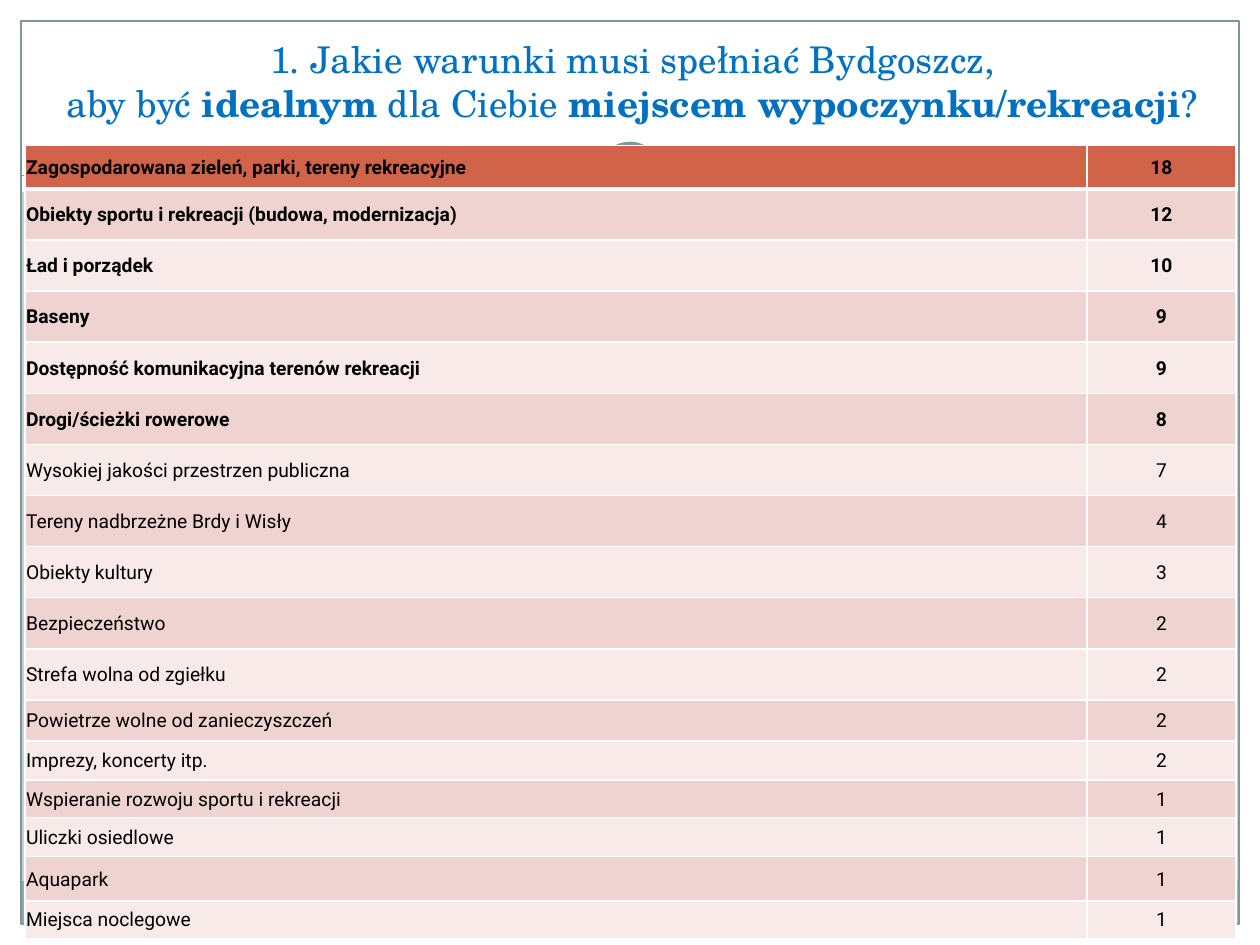
import pptx
import pptx.dml.color
import pptx.enum.dml
import pptx.enum.shapes
import pptx.enum.text
import pptx.oxml
import pptx.oxml.ns
import pptx.util
from lxml import etree

Pt = pptx.util.Pt
SHAPE = pptx.enum.shapes.MSO_SHAPE
ALIGN = pptx.enum.text.PP_ALIGN
ANCHOR = pptx.enum.text.MSO_ANCHOR


def color(hex_string):
    return pptx.dml.color.RGBColor.from_string(hex_string)


def write(paragraph, text, font="Roboto", size=11, ink="000000", bold=False, align=ALIGN.LEFT):
    paragraph.alignment = align
    run = paragraph.add_run()
    run.text = text
    run.font.name = font
    run.font.size = Pt(size)
    run.font.bold = bold
    run.font.color.rgb = color(ink)


deck = pptx.Presentation()
deck.slide_width, deck.slide_height = Pt(720), Pt(540)
slide = deck.slides.add_slide(deck.slide_layouts[6])
slide.background.fill.solid()
slide.background.fill.fore_color.rgb = color("C5D1D7")

# White margins, footer band, frame and the circle behind the table
# (shape, left, top, width, height, fill, line, line width)
backdrop = [
    (SHAPE.RECTANGLE, 0, 528, 720, 12, "FFFFFF", None, 0),
    (SHAPE.RECTANGLE, 0, 0, 720, 109.5, "FFFFFF", None, 0),
    (SHAPE.RECTANGLE, 0, 0, 12, 540, "FFFFFF", None, 0),
    (SHAPE.RECTANGLE, 708, 0, 12, 540, "FFFFFF", None, 0),
    (SHAPE.RECTANGLE, 11.75, 503.5, 695.5, 24.5, "8CADAE", None, 0),
    (SHAPE.RECTANGLE, 12, 12, 696, 516, None, "7C999A", 0.75),
    ("dashed rule", 12, 100.5, 696, 0, None, "7C999A", 0.75),
    (SHAPE.OVAL, 336, 75.5, 48, 48, "FFFFFF", None, 0),
    (SHAPE.OVAL, 343.5, 83, 33, 33, "FFFFFF", "7C999A", 4),
]
for kind, left, top, width, height, fill, line, weight in backdrop:
    if kind == "dashed rule":
        rule = slide.shapes.add_connector(
            pptx.enum.shapes.MSO_CONNECTOR.STRAIGHT, Pt(left), Pt(top), Pt(left + width), Pt(top))
        rule.line.color.rgb = color(line)
        rule.line.width = Pt(weight)
        rule.line.dash_style = pptx.enum.dml.MSO_LINE.SQUARE_DOT
        etree.SubElement(rule.element.spPr, pptx.oxml.ns.qn("a:effectLst"))
        continue
    part = slide.shapes.add_shape(kind, Pt(left), Pt(top), Pt(width), Pt(height))
    part.shadow.inherit = False
    if fill:
        part.fill.solid()
        part.fill.fore_color.rgb = color(fill)
    else:
        part.fill.background()
    if line:
        part.line.color.rgb = color(line)
        part.line.width = Pt(weight)
    else:
        part.line.fill.background()

# Title question
title = slide.shapes.add_textbox(Pt(25.5), Pt(15), Pt(671.5), Pt(60)).text_frame
title.word_wrap = True
title.vertical_anchor = ANCHOR.BOTTOM
question = title.paragraphs[0]
title_format = dict(font="TeX Gyre Schola", size=21, ink="0070C0", align=ALIGN.CENTER)
write(question, "1. Jakie warunki musi spełniać Bydgoszcz,", **title_format)
question.add_line_break()
for text, bold in [("aby być ", False), ("idealnym", True), (" dla Ciebie ", False),
                   ("miejscem wypoczynku/rekreacji", True), ("?", False)]:
    write(question, text, bold=bold, **title_format)

# Answers, number of mentions, row height
answers = [
    ("Zagospodarowana zieleń, parki, tereny rekreacyjne", 18, 25),
    ("Obiekty sportu i rekreacji (budowa, modernizacja)", 12, 29.2),
    ("Ład i porządek", 10, 29.2),
    ("Baseny", 9, 29.2),
    ("Dostępność komunikacyjna terenów rekreacji", 9, 29.2),
    ("Drogi/ścieżki rowerowe", 8, 29.2),
    ("Wysokiej jakości przestrzen publiczna", 7, 29.2),
    ("Tereny nadbrzeżne Brdy i Wisły", 4, 29.2),
    ("Obiekty kultury", 3, 29.2),
    ("Bezpieczeństwo", 2, 29.2),
    ("Strefa wolna od zgiełku", 2, 29.2),
    ("Powietrze wolne od zanieczyszczeń", 2, 23.4),
    ("Imprezy, koncerty itp.", 2, 22.4),
    ("Wspieranie rozwoju sportu i rekreacji", 1, 21.5),
    ("Uliczki osiedlowe", 1, 22.3),
    ("Aquapark", 1, 25.4),
    ("Miejsca noclegowe", 1, 21.4),
]
BOLD_ROWS = 6
ranking = slide.shapes.add_table(
    len(answers), 2, Pt(14.2), Pt(83), Pt(692), Pt(sum(a[2] for a in answers))).table
ranking.columns[0].width, ranking.columns[1].width = Pt(607), Pt(85)

for row, (answer, mentions, height) in enumerate(answers):
    ranking.rows[row].height = Pt(height)
    shade = "D16349" if row == 0 else ("F7EAE9", "EED3D0")[row % 2]
    for column, (text, align) in enumerate([(answer, ALIGN.LEFT), (str(mentions), ALIGN.CENTER)]):
        cell = ranking.cell(row, column)
        cell.margin_left = cell.margin_right = cell.margin_top = Pt(0.7)
        cell.margin_bottom = 0
        cell.vertical_anchor = ANCHOR.MIDDLE
        cell.fill.solid()
        cell.fill.fore_color.rgb = color(shade)
        write(cell.text_frame.paragraphs[0], text, bold=row < BOLD_ROWS, align=align)
        # White cell borders, thicker between the first row and the rest
        properties = cell._tc.get_or_add_tcPr()
        for position, side in enumerate("LRTB"):
            heavy = (row, side) in [(0, "B"), (1, "T")]
            properties.insert(position, pptx.oxml.parse_xml(
                f'<a:ln{side} {pptx.oxml.ns.nsdecls("a")} w="{Pt(3 if heavy else 1)}">'
                f'<a:solidFill><a:srgbClr val="FFFFFF"/></a:solidFill></a:ln{side}>'))

deck.save("out.pptx")
